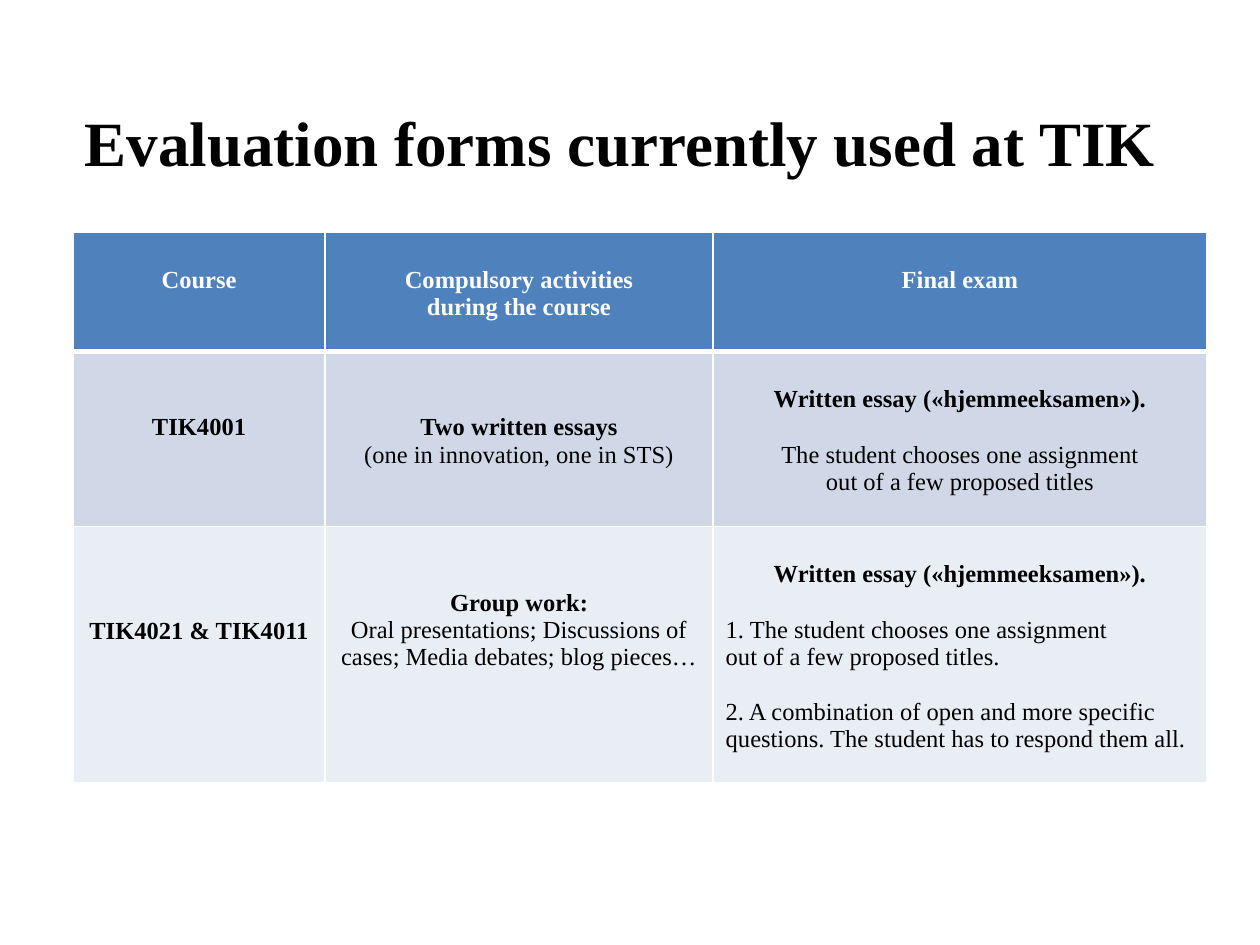
import pptx
import pptx.dml.color
import pptx.enum.text
import pptx.oxml
import pptx.oxml.ns
import pptx.util

Inches = pptx.util.Inches
Pt = pptx.util.Pt
RGBColor = pptx.dml.color.RGBColor
ALIGN = pptx.enum.text.PP_ALIGN
ANCHOR = pptx.enum.text.MSO_ANCHOR

WHITE = RGBColor(0xFF, 0xFF, 0xFF)
BLACK = RGBColor(0x00, 0x00, 0x00)
HEADER_BLUE = RGBColor(0x4F, 0x81, 0xBD)
BAND_DARK = RGBColor(0xD0, 0xD8, 0xE8)
BAND_LIGHT = RGBColor(0xE9, 0xED, 0xF4)

FONT = "Times New Roman"
TEXT_SIZE = 14
LINE_POINTS = 16.1  # height of one line of table text
CELL_MARGIN = 3.6

COLUMN_WIDTHS = (2, 3.08, 3.92)
ROW_HEIGHTS = (0.95, 1.39, 2.03)
ROW_FILLS = (HEADER_BLUE, BAND_DARK, BAND_LIGHT)

EXAM = "Written essay («hjemmeeksamen»)."

# Each cell: lines of space above, then (text, bold, centred, lines of space before)
CELLS = (
    (
        (1, [("Course", True, True, 0)]),
        (1, [("Compulsory activities", True, True, 0),
             ("during the course", True, True, 0)]),
        (1, [("Final exam", True, True, 0)]),
    ),
    (
        (2, [("TIK4001", True, True, 0)]),
        (2, [("Two written essays", True, True, 0),
             ("(one in innovation, one in STS)", False, True, 0)]),
        (1, [(EXAM, True, True, 0),
             ("The student chooses one assignment", False, True, 1),
             ("out of a few proposed titles", False, True, 0)]),
    ),
    (
        (3, [("TIK4021 & TIK4011", True, True, 0)]),
        (2, [("Group work:", True, True, 0),
             ("Oral presentations; Discussions of cases; "
              "Media debates; blog pieces…", False, True, 0)]),
        (1, [(EXAM, True, True, 0),
             ("1. The student chooses one assignment", False, False, 1),
             ("out of a few proposed titles.", False, False, 0),
             ("2. A combination of open and more specific questions. "
              "The student has to respond them all.", False, False, 1)]),
    ),
)


def set_all(target, values):
    for name, value in values.items():
        setattr(target, name, value)


def write_paragraph(para, text, size, color, bold, align, space_before=0):
    set_all(para, {"alignment": align, "space_before": Pt(space_before)})
    span = para.add_run()
    span.text = text
    set_all(span.font, {"name": FONT, "size": Pt(size), "bold": bold})
    span.font.color.rgb = color


def set_borders(cell, widths):
    """Draw white borders; widths maps L, R, T, B (in that order) to points."""
    properties = cell._tc.get_or_add_tcPr()
    for position, (side, points) in enumerate(widths.items()):
        line = pptx.oxml.parse_xml(
            f'<a:ln{side} {pptx.oxml.ns.nsdecls("a")} w="{Pt(points)}">'
            f'<a:solidFill><a:srgbClr val="{WHITE}"/></a:solidFill></a:ln{side}>')
        properties.insert(position, line)


def add_title(page, left, top, width, height):
    box = page.shapes.add_textbox(left, top, width, height)
    frame = box.text_frame
    set_all(frame, {"word_wrap": True, "vertical_anchor": ANCHOR.MIDDLE})
    write_paragraph(frame.paragraphs[0], "Evaluation forms currently used at TIK",
                    36, BLACK, True, ALIGN.CENTER)


def fill_cell(cell, lines_above, paragraphs, color):
    set_all(cell, {"margin_top": Pt(CELL_MARGIN + lines_above * LINE_POINTS),
                   "vertical_anchor": ANCHOR.TOP})
    frame = cell.text_frame
    for index, (text, bold, centred, lines_before) in enumerate(paragraphs):
        para = frame.add_paragraph() if index else frame.paragraphs[0]
        align = ALIGN.CENTER if centred else ALIGN.LEFT
        write_paragraph(para, text, TEXT_SIZE, color, bold, align,
                        lines_before * LINE_POINTS)


def add_evaluation_table(page, left, top, width, height):
    table = page.shapes.add_table(len(ROW_HEIGHTS), len(COLUMN_WIDTHS),
                                  left, top, width, height).table
    table.horz_banding = False
    for column, share in zip(table.columns, COLUMN_WIDTHS):
        column.width = int(width * share / sum(COLUMN_WIDTHS))
    for row, share in zip(table.rows, ROW_HEIGHTS):
        row.height = int(height * share / sum(ROW_HEIGHTS))

    for row_index, row_cells in enumerate(CELLS):
        # The thick rule separates the header from the first course
        widths = {"L": 1, "R": 1, "T": 3 if row_index == 1 else 1,
                  "B": 3 if row_index == 0 else 1}
        color = BLACK if row_index else WHITE
        for column_index, (lines_above, paragraphs) in enumerate(row_cells):
            cell = table.cell(row_index, column_index)
            cell.fill.solid()
            cell.fill.fore_color.rgb = ROW_FILLS[row_index]
            set_borders(cell, widths)
            fill_cell(cell, lines_above, paragraphs, color)


def main():
    deck = pptx.Presentation()
    set_all(deck, {"slide_width": Inches(10), "slide_height": Inches(7.5)})
    page = deck.slides.add_slide(deck.slide_layouts[6])

    # Heading
    add_title(page, Inches(0.42), Inches(0.5), Inches(9), Inches(1.25))
    # Courses and their evaluation forms
    add_evaluation_table(page, Inches(0.58), Inches(1.84),
                         Inches(sum(COLUMN_WIDTHS)), Inches(sum(ROW_HEIGHTS)))

    deck.save("out.pptx")


if __name__ == "__main__":
    main()
